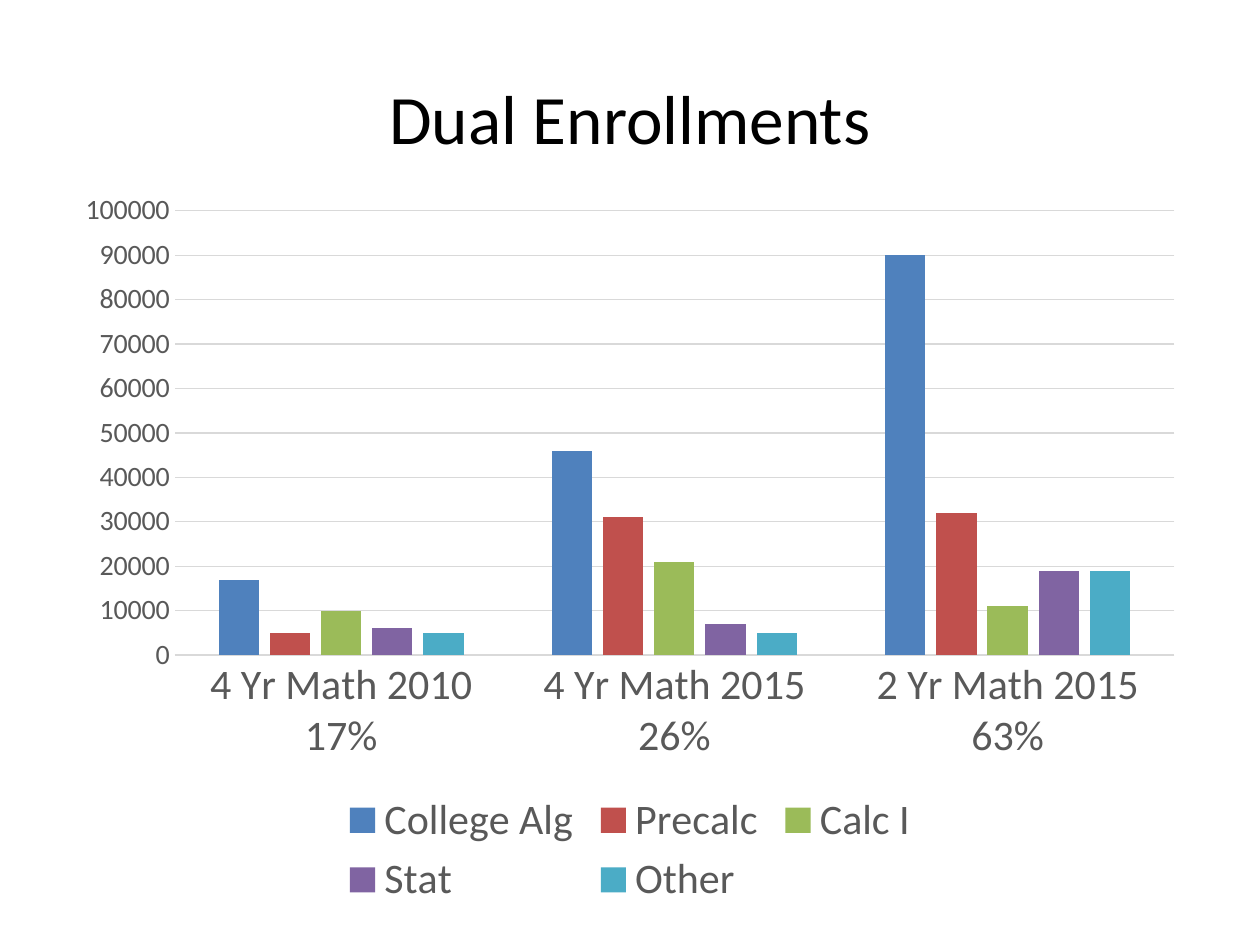
from pptx import Presentation
from pptx import util as u
from pptx.chart.data import CategoryChartData
from pptx.dml.color import RGBColor
from pptx.enum import chart as ch, text

EMU_PER_PX = 914400 / 126
GREY, GRID = "595959", "D9D9D9"

ENROLLMENTS = {
    "College Alg": ("4F81BD", (17000, 46000, 90000)),
    "Precalc": ("C0504D", (5000, 31000, 32000)),
    "Calc I": ("9BBB59", (10000, 21000, 11000)),
    "Stat": ("8064A2", (6000, 7000, 19000)),
    "Other": ("4BACC6", (5000, 5000, 19000)),
}
PROGRAMS = ("4 Yr Math 2010 17%", "4 Yr Math 2015 26%", "2 Yr Math 2015 63%")


def px(*lengths):
    return [u.Emu(round(n * EMU_PER_PX)) for n in lengths]


def rgb(color):
    return RGBColor.from_string(color)


def assign(target, values):
    for name, value in values.items():
        setattr(target, name, value)


class Deck:
    """Holds the font and the slide being filled."""

    def __init__(self, width, height, font="Calibri"):
        self.font = font
        self.prs = Presentation()
        self.prs.slide_width, self.prs.slide_height = px(width, height)
        self.slide = self.prs.slides.add_slide(self.prs.slide_layouts[6])

    def style(self, font, size, color):
        assign(font, {"name": self.font, "size": u.Pt(size)})
        font.color.rgb = rgb(color)

    def line(self, line, color):
        line.color.rgb = rgb(color)
        line.width = u.Pt(0.75)

    def title(self, words, box, size, color):
        frame = self.slide.shapes.add_textbox(*px(*box)).text_frame
        assign(frame, {"word_wrap": True,
                       "vertical_anchor": text.MSO_ANCHOR.MIDDLE})
        heading = frame.paragraphs[0]
        heading.alignment = text.PP_ALIGN.CENTER
        run = heading.add_run()
        run.text = words
        self.style(run.font, size, color)

    def columns(self, categories, series, box):
        data = CategoryChartData(number_format="0")
        data.categories = categories
        for name, (_, values) in series.items():
            data.add_series(name, values)
        chart = self.slide.shapes.add_chart(
            ch.XL_CHART_TYPE.COLUMN_CLUSTERED, *px(*box), data).chart
        assign(chart, {"has_title": False, "has_legend": True})
        self.style(chart.font, 10, "000000")

        plot = chart.plots[0]
        assign(plot, {"gap_width": 219, "overlap": -27,
                      "vary_by_categories": False})
        for bars, (color, _) in zip(plot.series, series.values()):
            bars.invert_if_negative = False
            bars.format.fill.solid()
            bars.format.fill.fore_color.rgb = rgb(color)

        programs, counts = chart.category_axis, chart.value_axis
        for axis, size in ((programs, 24), (counts, 16)):
            assign(axis, {"major_tick_mark": ch.XL_TICK_MARK.NONE,
                          "minor_tick_mark": ch.XL_TICK_MARK.NONE})
            self.style(axis.tick_labels.font, size, GREY)
        self.line(programs.format.line, GRID)
        assign(counts, {"minimum_scale": 0, "maximum_scale": 100000,
                        "major_unit": 10000, "has_major_gridlines": True})
        assign(counts.tick_labels, {"number_format": "0",
                                    "number_format_is_linked": False})
        counts.format.line.fill.background()
        self.line(counts.major_gridlines.format.line, GRID)

        assign(chart.legend, {"position": ch.XL_LEGEND_POSITION.BOTTOM,
                              "include_in_layout": False})
        self.style(chart.legend.font, 24, GREY)


def main():
    deck = Deck(1260, 945)
    deck.title("Dual Enrollments", (63, 38, 1134, 158), 39.6, "000000")
    deck.columns(PROGRAMS, ENROLLMENTS, (63, 179, 1134, 735))
    deck.prs.save("out.pptx")


if __name__ == "__main__":
    main()
